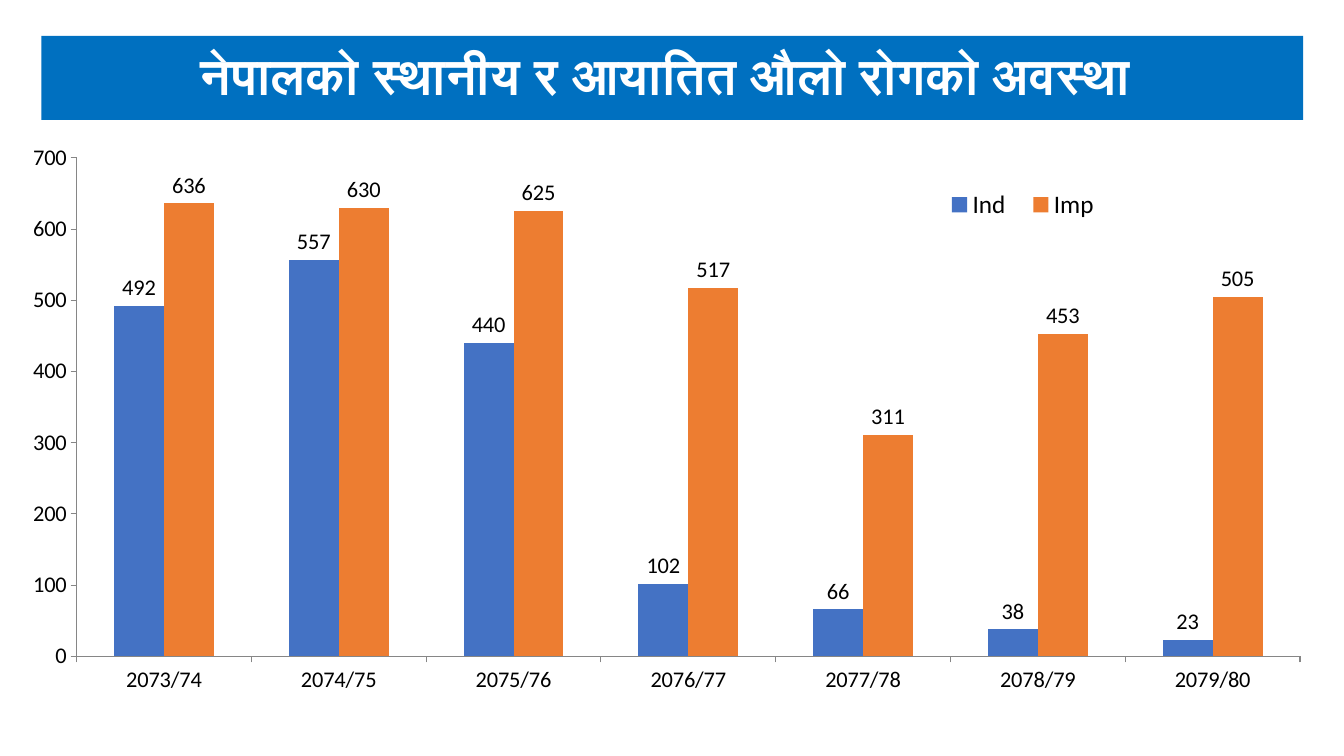
import pptx
import pptx.util
import pptx.dml.color
import pptx.chart.data
import pptx.enum.chart
import pptx.enum.text
import pptx.oxml
import pptx.oxml.ns

Cm = pptx.util.Cm
Pt = pptx.util.Pt

YEARS = [f"{year}/{year - 1999}" for year in range(2073, 2080)]
CASES = [
    ("Ind", "4472C4", (492, 557, 440, 102, 66, 38, 23)),
    ("Imp", "ED7D31", (636, 630, 625, 517, 311, 453, 505)),
]


def paint(color, code):
    color.rgb = pptx.dml.color.RGBColor.from_string(code)


def style(font, size, code, name="Calibri", bold=False):
    font.size = Pt(size)
    font.name = name
    font.bold = bold
    paint(font.color, code)


def place(part, mode, left, top, width, height):
    inner = '<c:layoutTarget val="inner"/>' if mode == "inner" else ""
    sizes = "".join(
        f'<c:{tag} val="{size}"/>'
        for tag, size in zip("xywh", (left, top, width, height))
    )
    space = pptx.oxml.ns.nsdecls("c")
    node = pptx.oxml.parse_xml(
        f"<c:layout {space}><c:manualLayout>{inner}"
        '<c:xMode val="edge"/><c:yMode val="edge"/>'
        f"{sizes}</c:manualLayout></c:layout>"
    )
    for old in part.findall(pptx.oxml.ns.qn("c:layout")):
        part.remove(old)
    if mode == "inner":
        part.insert(0, node)
    else:
        part.find(pptx.oxml.ns.qn("c:legendPos")).addnext(node)


def add_title(slide, text):
    title = slide.shapes.title
    title.left, title.top = Cm(1.04), Cm(1.12)
    title.width, title.height = Cm(31.8), Cm(1.68)
    title.fill.solid()
    paint(title.fill.fore_color, "0070C0")
    frame = title.text_frame
    frame.text = text
    frame.word_wrap = True
    frame.auto_size = pptx.enum.text.MSO_AUTO_SIZE.SHAPE_TO_FIT_TEXT
    frame.vertical_anchor = pptx.enum.text.MSO_ANCHOR.MIDDLE
    line = frame.paragraphs[0]
    line.alignment = pptx.enum.text.PP_ALIGN.CENTER
    line.line_spacing = 0.9
    style(line.font, 36, "FFFFFF", "Arial", True)


def set_axis(axis):
    axis.has_major_gridlines = False
    axis.major_tick_mark = pptx.enum.chart.XL_TICK_MARK.OUTSIDE
    axis.minor_tick_mark = pptx.enum.chart.XL_TICK_MARK.NONE
    axis.format.line.width = Pt(0.75)
    paint(axis.format.line.color, "868686")
    style(axis.tick_labels.font, 16, "000000")


def set_bars(bars, code):
    bars.invert_if_negative = False
    bars.format.fill.solid()
    paint(bars.format.fill.fore_color, code)
    labels = bars.data_labels
    labels.show_value = True
    labels.position = pptx.enum.chart.XL_LABEL_POSITION.OUTSIDE_END
    style(labels.font, 16, "000000")


def set_legend(chart):
    chart.has_legend = True
    legend = chart.legend
    legend.position = pptx.enum.chart.XL_LEGEND_POSITION.RIGHT
    legend.include_in_layout = False
    style(legend.font, 18, "000000")
    place(legend._element, "edge", 0.7, 0.08, 0.14, 0.07)


def add_chart(slide):
    data = pptx.chart.data.CategoryChartData()
    data.categories = YEARS
    for name, code, counts in CASES:
        data.add_series(name, counts)
    kind = pptx.enum.chart.XL_CHART_TYPE.COLUMN_CLUSTERED
    chart = slide.shapes.add_chart(
        kind, Cm(0.76), Cm(3.56), Cm(32.49), Cm(13.92), data
    ).chart
    chart.has_title = False
    style(chart.font, 16, "000000")
    plot = chart.plots[0]
    plot.gap_width = 150
    plot.overlap = 0
    plot.vary_by_categories = False
    for bars, (name, code, counts) in zip(plot.series, CASES):
        set_bars(bars, code)
    for axis in (chart.category_axis, chart.value_axis):
        set_axis(axis)
    scale = chart.value_axis
    scale.minimum_scale, scale.maximum_scale, scale.major_unit = 0, 700, 100
    set_legend(chart)
    area = chart._chartSpace.chart.plotArea
    place(area, "inner", 0.036, 0.03, 0.949, 0.903)


def main():
    deck = pptx.Presentation()
    deck.slide_width, deck.slide_height = Cm(33.87), Cm(19.05)
    slide = deck.slides.add_slide(deck.slide_layouts[5])
    add_title(slide, "नेपालको स्थानीय र आयातित औलो रोगको अवस्था ")
    add_chart(slide)
    deck.save("out.pptx")


if __name__ == "__main__":
    main()
